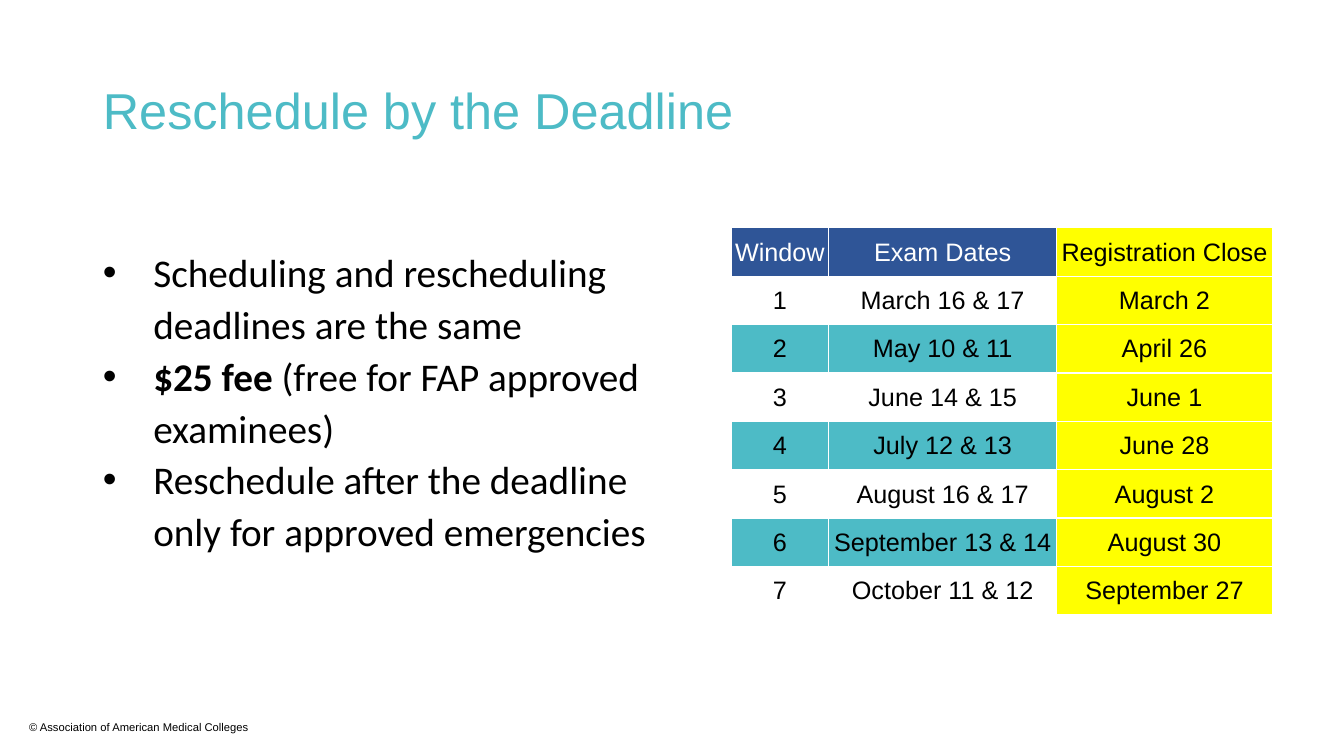
from dataclasses import dataclass

from lxml.etree import SubElement
from pptx import Presentation
from pptx.dml.color import RGBColor as RGB
from pptx.enum.text import MSO_ANCHOR as ANCHOR, MSO_AUTO_SIZE as AUTO, PP_ALIGN as ALIGN
from pptx.oxml.ns import qn
from pptx.util import Inches, Pt


@dataclass(frozen=True)
class Theme:
    heading_font: str = "Arial"
    body_font: str = "Calibri"
    title_size: int = 36
    body_size: int = 28
    table_size: int = 18
    footer_size: int = 8
    teal: str = "4DBBC6"
    navy: str = "2F5597"
    yellow: str = "FFFF00"
    black: str = "000000"
    white: str = "FFFFFF"


class SlideBuilder:
    def __init__(self, prs, theme):
        self.theme = theme
        self.slide = prs.slides.add_slide(prs.slide_layouts[1])

    def run(self, p, text, size, color, font=None, bold=False):
        r = p.add_run()
        r.text = text
        r.font.name = font or self.theme.heading_font
        r.font.size = Pt(size)
        r.font.bold = bold
        r.font.color.rgb = RGB.from_string(color)

    def place(self, sp, left, top, width, height, anchor=ANCHOR.TOP):
        sp.left, sp.top = Inches(left), Inches(top)
        sp.width, sp.height = Inches(width), Inches(height)
        tf = sp.text_frame
        tf.word_wrap = True
        tf.auto_size = AUTO.NONE
        tf.vertical_anchor = anchor
        return tf

    def title(self, text, *box):
        tf = self.place(self.slide.shapes.title, *box, anchor=ANCHOR.MIDDLE)
        p = tf.paragraphs[0]
        p.alignment = ALIGN.LEFT
        p.line_spacing = 0.9
        self.run(p, text, self.theme.title_size, self.theme.teal)

    def bullets(self, items, *box):
        th = self.theme
        tf = self.place(self.slide.placeholders[1], *box)
        for i, runs in enumerate(items):
            p = tf.add_paragraph() if i else tf.paragraphs[0]
            pPr = p._p.get_or_add_pPr()
            pPr.set("marL", str(Inches(0.5)))
            pPr.set("indent", str(-Inches(0.5)))
            SubElement(pPr, qn("a:buFont"), typeface="Arial")
            SubElement(pPr, qn("a:buChar"), char="•")
            p.line_spacing = 1.1
            p.space_before = p.space_after = Pt(0)
            for text, bold in runs:
                self.run(p, text, th.body_size, th.black, th.body_font, bold)

    def footer(self, text, *box):
        sp = self.slide.shapes.add_textbox(0, 0, 0, 0)
        tf = self.place(sp, *box)
        self.run(tf.paragraphs[0], text, self.theme.footer_size, self.theme.black)

    def borders(self, cell):
        tcPr = cell._tc.get_or_add_tcPr()
        for side in "LRTB":
            ln = SubElement(tcPr, qn(f"a:ln{side}"), w=str(Pt(1)))
            fill = SubElement(ln, qn("a:solidFill"))
            SubElement(fill, qn("a:srgbClr"), val=self.theme.white)

    def cell_fill(self, row, col):
        if col == 2:
            return self.theme.yellow
        if row == 0:
            return self.theme.navy
        return None if row % 2 else self.theme.teal

    def table(self, rows, widths, row_height, left, top):
        th = self.theme
        frame = self.slide.shapes.add_table(
            len(rows), len(widths), Inches(left), Inches(top),
            Inches(sum(widths)), Inches(row_height * len(rows)))
        table = frame.table
        table.first_row = table.horz_banding = False
        for col, width in zip(table.columns, widths):
            col.width = Inches(width)
        for i, row in enumerate(rows):
            table.rows[i].height = Inches(row_height)
            for j, text in enumerate(row):
                cell = table.cell(i, j)
                cell.margin_left = cell.margin_right = cell.margin_top = Inches(0.01)
                cell.margin_bottom = 0
                cell.vertical_anchor = ANCHOR.MIDDLE
                self.borders(cell)
                color = self.cell_fill(i, j)
                if color:
                    cell.fill.solid()
                    cell.fill.fore_color.rgb = RGB.from_string(color)
                else:
                    cell.fill.background()
                p = cell.text_frame.paragraphs[0]
                p.alignment = ALIGN.CENTER
                ink = th.white if color == th.navy else th.black
                self.run(p, text, th.table_size, ink)


BULLETS = [
    [("Scheduling and rescheduling deadlines are the same", False)],
    [("$25 fee", True), (" (free for FAP approved examinees)", False)],
    [("Reschedule after the deadline only for approved emergencies", False)],
]

EXAM_WINDOWS = [
    ("March 16 & 17", "March 2"),
    ("May 10 & 11", "April 26"),
    ("June 14 & 15", "June 1"),
    ("July 12 & 13", "June 28"),
    ("August 16 & 17", "August 2"),
    ("September 13 & 14", "August 30"),
    ("October 11 & 12", "September 27"),
]


def main():
    prs = Presentation()
    prs.slide_width, prs.slide_height = Inches(13.33), Inches(7.5)
    s = SlideBuilder(prs, Theme())

    # Copyright line
    s.footer("© Association of American Medical Colleges", 0.19, 7.1, 5.37, 0.24)

    # Title and key points
    s.title("Reschedule by the Deadline", 0.92, 0.4, 11.5, 1.45)
    s.bullets(BULLETS, 0.92, 2.37, 6, 3.19)

    # Exam windows, numbered from 1
    rows = [("Window", "Exam Dates", "Registration Close")]
    rows += [(str(n), *dates) for n, dates in enumerate(EXAM_WINDOWS, 1)]
    s.table(rows, (0.97, 2.26, 2.14), 0.48, 7.25, 2.26)

    prs.save("out.pptx")


if __name__ == "__main__":
    main()
